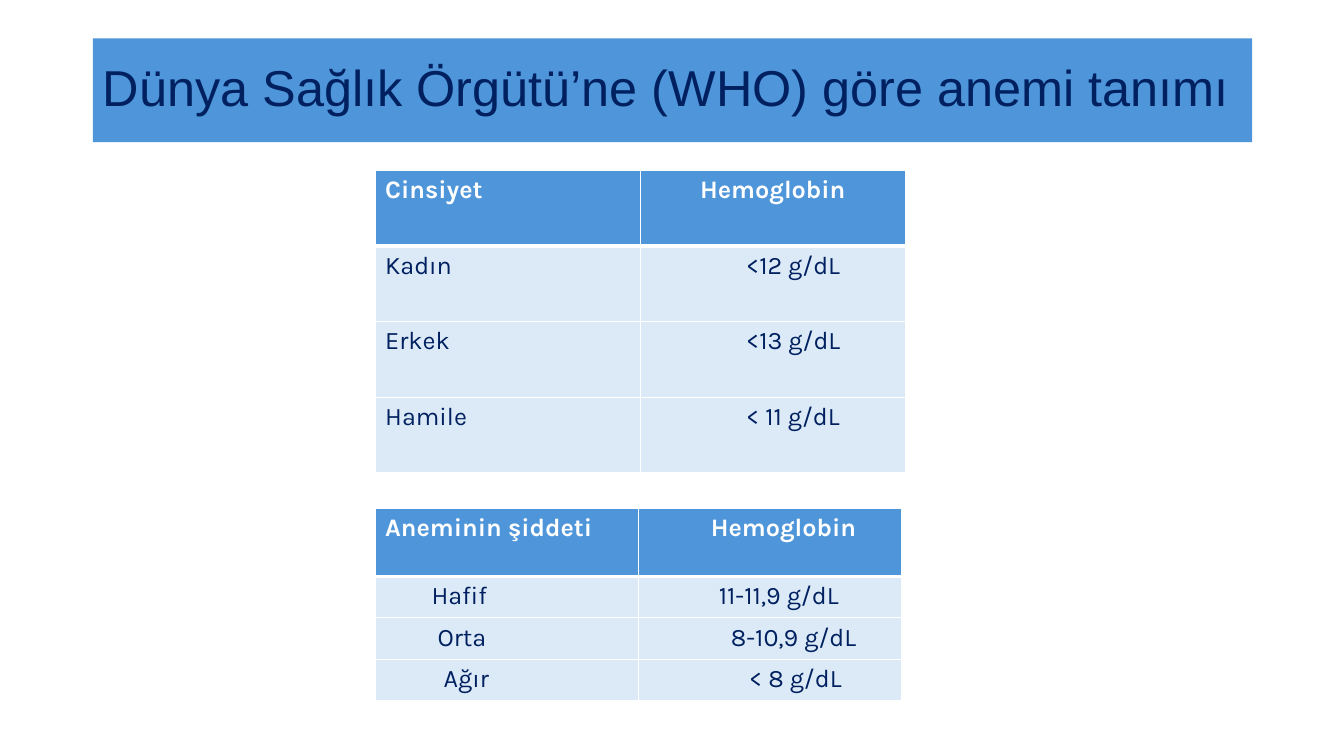
from lxml.etree import SubElement
from pptx import Presentation
from pptx.dml.color import RGBColor
from pptx.enum.text import MSO_ANCHOR, PP_ALIGN
from pptx.oxml.ns import qn
from pptx.util import Inches, Pt

COLORS = {"blue": "4E95D9", "pale": "DCEAF7", "navy": "002060", "white": "FFFFFF"}


def write(tf, text, size=18, font="Karla", color="navy", bold=False, align=PP_ALIGN.LEFT):
    p = tf.paragraphs[0]
    p.alignment = align
    r = p.add_run()
    r.text = text
    r.font.size = Pt(size)
    r.font.name = font
    r.font.bold = bold
    r.font.color.rgb = RGBColor.from_string(COLORS[color])
    return p


def add_border(cell, side, width):
    ln = SubElement(cell._tc.get_or_add_tcPr(), qn(f"a:ln{side}"), w=str(Pt(width)))
    fill = SubElement(ln, qn("a:solidFill"))
    SubElement(fill, qn("a:srgbClr"), val=COLORS["white"])


prs = Presentation()
prs.slide_width = Inches(13.33)
prs.slide_height = Inches(7.5)
s = prs.slides.add_slide(prs.slide_layouts[5])

title = s.shapes.title
title.left, title.top = Inches(0.92), Inches(0.38)
title.width, title.height = Inches(11.5), Inches(1.03)
title.fill.solid()
title.fill.fore_color.rgb = RGBColor.from_string(COLORS["blue"])
tf = title.text_frame
tf.word_wrap = True
tf.vertical_anchor = MSO_ANCHOR.MIDDLE
p = write(tf, "Dünya Sağlık Örgütü’ne (WHO) göre anemi tanımı", size=36, font="Arial")
p.line_spacing = 0.9

severity = [
    [("Aneminin şiddeti", 0.1), ("Hemoglobin", 0.72)],
    [("Hafif", 0.56), ("11-11,9 g/dL", 0.8)],
    [("Orta", 0.62), ("8-10,9 g/dL", 0.92)],
    [("Ağır", 0.68), ("< 8 g/dL", 1.1)],
]
gender = [
    [("Cinsiyet", 0.1), ("Hemoglobin", None)],
    [("Kadın", 0.1), ("<12 g/dL", 1.05)],
    [("Erkek", 0.1), ("<13 g/dL", 1.05)],
    [("Hamile", 0.1), ("< 11 g/dL", 1.05)],
]
tables = [
    (severity, 5.04, 2.61, [0.68, 0.41, 0.41, 0.41]),
    (gender, 1.69, 2.63, [0.75] * 4),
]

for rows, top, col_width, heights in tables:
    frame = s.shapes.add_table(
        len(rows), 2, Inches(3.72), Inches(top), Inches(2 * col_width), Inches(sum(heights))
    )
    table = frame.table
    for col in table.columns:
        col.width = Inches(col_width)
    for i, row in enumerate(rows):
        table.rows[i].height = Inches(heights[i])
        header = i == 0
        for j, (text, indent) in enumerate(row):
            cell = table.cell(i, j)
            cell.margin_left = Inches(0.1 if indent is None else indent)
            for side in "LRTB":
                thick = (header and side == "B") or (i == 1 and side == "T")
                add_border(cell, side, 3 if thick else 1)
            cell.fill.solid()
            cell.fill.fore_color.rgb = RGBColor.from_string(COLORS["blue" if header else "pale"])
            write(
                cell.text_frame,
                text,
                color="white" if header else "navy",
                bold=header,
                align=PP_ALIGN.CENTER if indent is None else PP_ALIGN.LEFT,
            )

prs.save("out.pptx")
